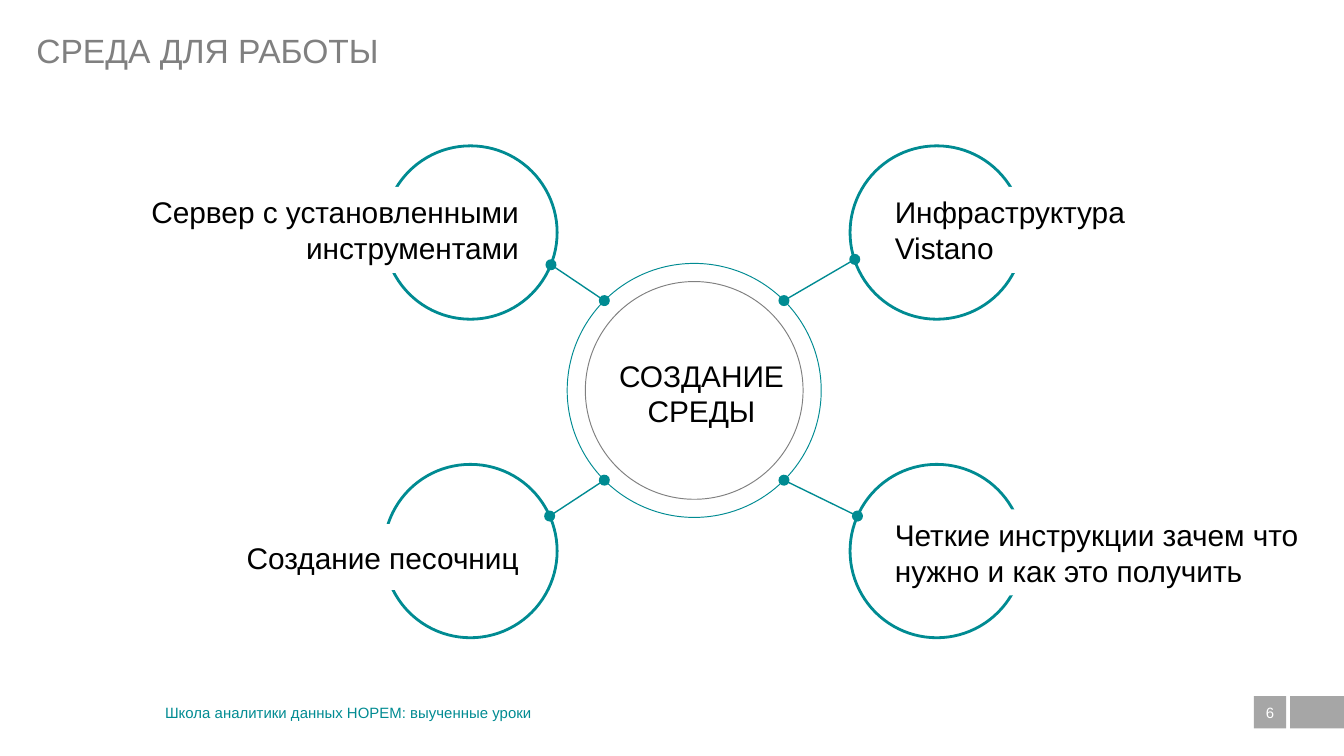
import math
from pptx import Presentation, util as u
from pptx.dml.color import RGBColor
from pptx.enum import shapes, text
from pptx.oxml.ns import qn
from lxml import etree

WIDTH = 10
HEIGHT = WIDTH * 9 / 16
TITLE = "СРЕДА ДЛЯ РАБОТЫ"
FOOTER = "Школа аналитики данных НОРЕМ: выученные уроки"
PAGE = "6"
HUB_LABEL = "СОЗДАНИЕ\vСРЕДЫ"
# column, row (-1 or 1 from the hub), label, its top, width and height, outer link end
BRANCHES = [
    (-1, -1, "Сервер с установленными инструментами", 1.39, 3.14, 0.64, (4.10, 1.97)),
    (1, -1, "Инфраструктура Vistano", 1.39, 2.12, 0.64, (6.36, 1.93)),
    (-1, 1, "Создание песочниц", 3.90, 2.30, 0.49, (4.09, 3.84)),
    (1, 1, "Четкие инструкции зачем что нужно и как это получить", 3.79, 3.38, 0.64, (6.38, 3.84)),
]

THEME = {
    "font": "Arial", "teal": "008B92", "grey": "808080", "block": "A6A6A6",
    "white": "FFFFFF", "black": "000000",
    "title": 18, "body": 16, "small": 8,
}

HUB_SIZE, CORE_SIZE, NODE_SIZE = 1.89, 1.62, 1.29
HUB = (4.22 + HUB_SIZE / 2, 1.96 + HUB_SIZE / 2)
NODE_X = {-1: 3.5, 1: 6.97}
NODE_Y = {-1: 1.73, 1: 4.1}
LABEL_EDGE = {-1: 3.96, 1: 6.56}  # edge of the label that faces the hub
BAR_TOP, BAR_HEIGHT = 5.18, 0.24

ALIGN, ANCHOR = text.PP_ALIGN, text.MSO_ANCHOR
RECT, OVAL = shapes.MSO_SHAPE.RECTANGLE, shapes.MSO_SHAPE.OVAL

deck = Presentation()
deck.slide_width, deck.slide_height = u.Inches(WIDTH), u.Inches(HEIGHT)
slide = deck.slides.add_slide(deck.slide_layouts[6])


def colour(name):
    return RGBColor.from_string(THEME[name])


def inches(*lengths):
    return [u.Inches(length) for length in lengths]


def write(box, words, size, ink, align=ALIGN.LEFT, anchor=ANCHOR.TOP, wrap=True, inset=None):
    frame = box.text_frame
    frame.word_wrap, frame.vertical_anchor = wrap, anchor
    if inset is not None:
        frame.margin_left = frame.margin_right = u.Inches(inset)
        frame.margin_top = frame.margin_bottom = u.Inches(inset)
    frame.text = words
    for paragraph in frame.paragraphs:
        paragraph.alignment = align
        for run in paragraph.runs:
            run.font.name, run.font.size = THEME["font"], u.Pt(THEME[size])
            run.font.color.rgb = colour(ink)


def add_text(left, top, width, height, *args, **options):
    write(slide.shapes.add_textbox(*inches(left, top, width, height)), *args, **options)


def add_block(kind, left, top, width, height, fill=None, line=None, weight=0):
    block = slide.shapes.add_shape(kind, *inches(left, top, width, height))
    block.shadow.inherit = False
    if fill:
        block.fill.solid()
        block.fill.fore_color.rgb = colour(fill)
    else:
        block.fill.background()
    if line:
        block.line.color.rgb, block.line.width = colour(line), u.Pt(weight)
    else:
        block.line.fill.background()
    return block


def add_circle(centre, size, fill, line, weight):
    x, y = centre
    add_block(OVAL, x - size / 2, y - size / 2, size, size, fill, line, weight)


def add_link(start, end):
    """Draw a line with a dot at both ends."""
    link = slide.shapes.add_connector(shapes.MSO_CONNECTOR.STRAIGHT, *inches(*start, *end))
    link.line.color.rgb, link.line.width = colour("teal"), u.Pt(0.75)
    outline = link._element.spPr.find(qn("a:ln"))
    for tag in ("a:headEnd", "a:tailEnd"):
        etree.SubElement(outline, qn(tag), type="oval")
    etree.SubElement(link._element.spPr, qn("a:effectLst"))


# Title and footer
add_block(RECT, 9.6, BAR_TOP, 0.4, BAR_HEIGHT, "block")
add_text(0.27, 0.14, 8.35, 0.47, TITLE, "title", "grey", anchor=ANCHOR.MIDDLE, inset=0)
write(add_block(RECT, 9.33, BAR_TOP, 0.24, BAR_HEIGHT, "block"), PAGE, "small", "white",
      ALIGN.CENTER, ANCHOR.MIDDLE, inset=0)
add_text(1.13, BAR_TOP, 8.17, BAR_HEIGHT, FOOTER, "small", "teal", anchor=ANCHOR.MIDDLE)

# Hub
add_circle(HUB, HUB_SIZE, "white", "teal", 0.5)
add_circle(HUB, CORE_SIZE, None, "grey", 0.5)
add_text(4.5, 2.61, 1.44, 0.64, HUB_LABEL, "body", "black", ALIGN.CENTER, wrap=False)

# Branches: each label hides the part of its circle that it crosses
reach = HUB_SIZE / 2 * math.sqrt(0.5)
for column, row, label, top, width, height, link_end in BRANCHES:
    add_circle((NODE_X[column], NODE_Y[row]), NODE_SIZE, "white", "teal", 1.5)
    left = LABEL_EDGE[column] - (width if column < 0 else 0)
    write(add_block(RECT, left, top, width, height, "white"), label, "body", "black",
          ALIGN.RIGHT if column < 0 else ALIGN.LEFT, ANCHOR.MIDDLE)
    add_link((HUB[0] + column * reach, HUB[1] + row * reach), link_end)

deck.save("out.pptx")
